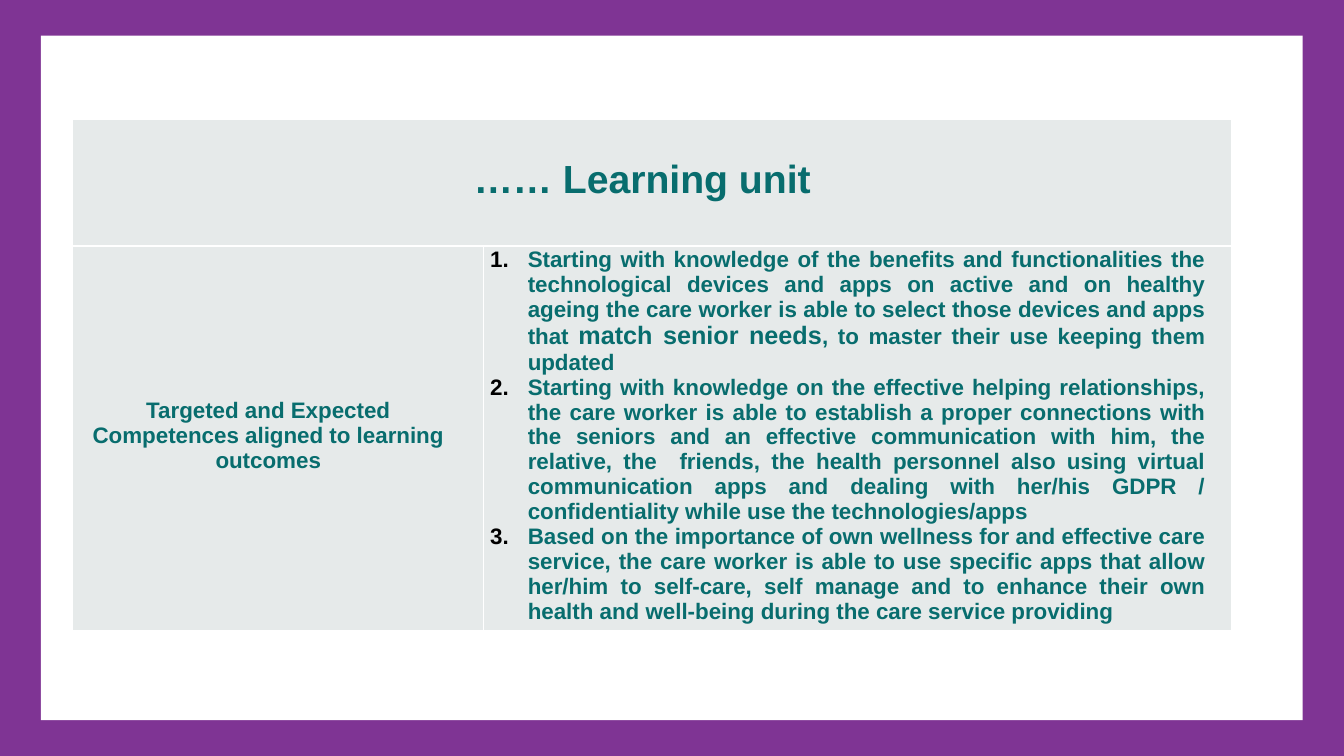
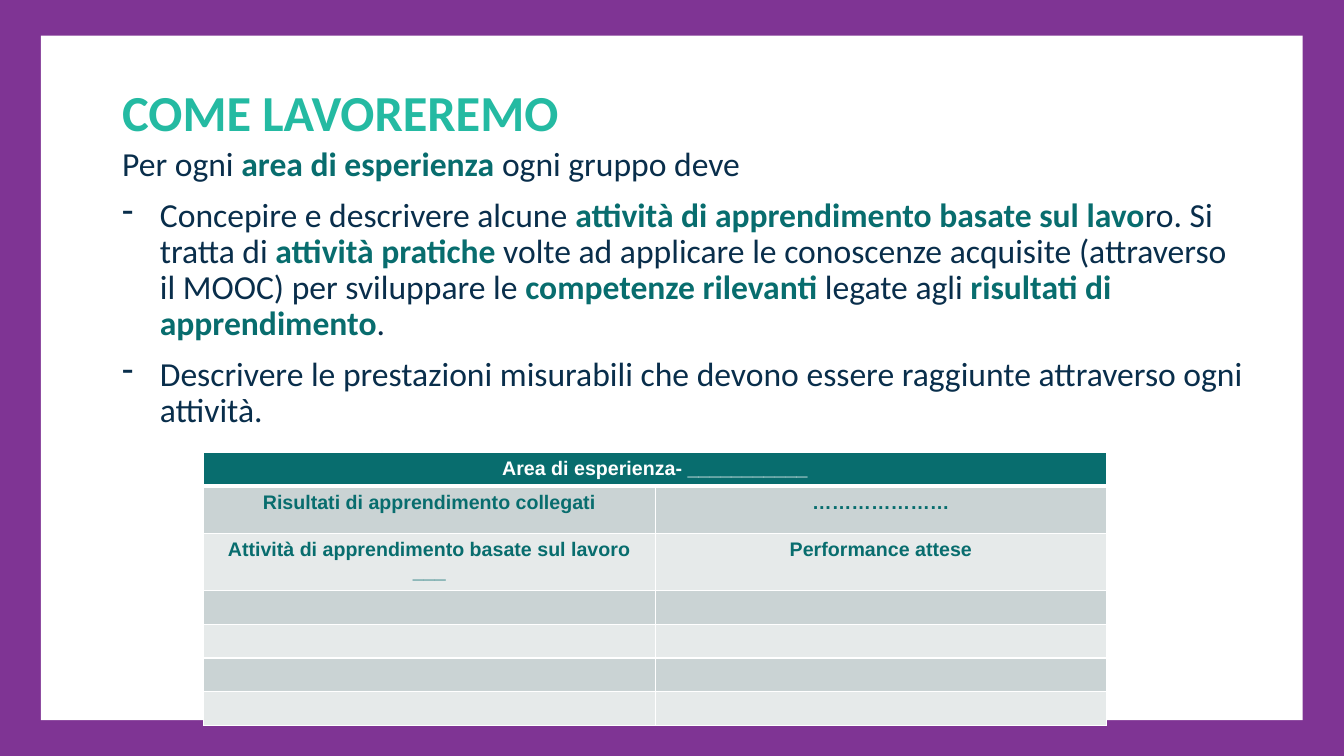
"""Build two framed slides: a learning unit table and a group work outline."""
from dataclasses import dataclass

from lxml import etree
from pptx import Presentation
from pptx.dml.color import RGBColor
from pptx.enum.shapes import MSO_SHAPE
from pptx.enum.text import MSO_ANCHOR, PP_ALIGN
from pptx.oxml.ns import qn
from pptx.slide import Slide
from pptx.util import Cm, Length, Pt

RECTANGLE = MSO_SHAPE.RECTANGLE
TOP, MIDDLE = MSO_ANCHOR.TOP, MSO_ANCHOR.MIDDLE
LEFT, CENTER, JUSTIFY = PP_ALIGN.LEFT, PP_ALIGN.CENTER, PP_ALIGN.JUSTIFY

PURPLE = RGBColor(0x7F, 0x34, 0x94)
WHITE = RGBColor(0xFF, 0xFF, 0xFF)
BLACK = RGBColor(0x00, 0x00, 0x00)
TEAL = RGBColor(0x08, 0x6D, 0x6E)
MINT = RGBColor(0x24, 0xBA, 0xA2)
NAVY = RGBColor(0x09, 0x2E, 0x4B)
LIGHT_GREY = RGBColor(0xE6, 0xEA, 0xEA)
MID_GREY = RGBColor(0xCA, 0xD3, 0xD4)

TABLE_FONT = "Arial"
TEXT_FONT = "Calibri"
SLIDE_WIDTH, SLIDE_HEIGHT = Cm(33.87), Cm(19.05)
TEXT_LEFT, TEXT_WIDTH = Cm(2.2), Cm(29.44)
THIN, THICK = Pt(1), Pt(3)


@dataclass(frozen=True)
class Run:
    """A stretch of text in one style."""
    text: str
    size: int
    color: RGBColor = TEAL
    bold: bool = True
    font: str = TABLE_FONT


@dataclass(frozen=True)
class Bullet:
    """A list marker: a character, or a number when none is given."""
    color: RGBColor
    character: str = ""


@dataclass(frozen=True)
class ParagraphStyle:
    """Layout of a paragraph."""
    alignment: PP_ALIGN = LEFT
    margin: Length = Cm(0)
    indent: Length = Cm(0)
    line_spacing: float = 1.0
    space_before: int = 0
    bullet: Bullet | None = None


@dataclass(frozen=True)
class TextBlock:
    """Paragraphs, each a tuple of runs, with one style per paragraph."""
    paragraphs: tuple[tuple[Run, ...], ...]
    styles: tuple[ParagraphStyle, ...]


@dataclass(frozen=True)
class Margins:
    """Inner margins of a table cell."""
    left: Length
    top: Length
    right: Length
    bottom: Length


@dataclass(frozen=True)
class TableRow:
    """A table row; a single block spans all columns."""
    height: Length
    fill: RGBColor
    blocks: tuple[TextBlock, ...] = ()


@dataclass(frozen=True)
class TableDesign:
    """Place and look of a table."""
    left: Length
    top: Length
    column_widths: tuple[Length, ...]
    rows: tuple[TableRow, ...]
    margins: Margins
    anchor: MSO_ANCHOR
    header_line: Length


CENTERED = ParagraphStyle(CENTER)
NUMBERED = ParagraphStyle(JUSTIFY, Cm(0.95), Cm(-0.95), bullet=Bullet(BLACK))
PLAIN = ParagraphStyle(LEFT, Cm(1.27), Cm(-0.64), 0.9, 10)
DASHED = ParagraphStyle(LEFT, Cm(1.58), Cm(-0.95), 0.9, 10, Bullet(NAVY, "-"))


def centered(*runs: Run) -> TextBlock:
    """Return a block with one centred paragraph."""
    return TextBlock((runs,), (CENTERED,))


def normal(text: str) -> Run:
    """Return body text."""
    return Run(text, 24, NAVY, False, TEXT_FONT)


def strong(text: str) -> Run:
    """Return highlighted body text."""
    return Run(text, 24, TEAL, True, TEXT_FONT)


COMPETENCES = TextBlock(
    (
        (
            Run("Starting with knowledge of the benefits and functionalities the technological "
                "devices and apps on active and on healthy ageing the care worker is able to "
                "select those devices and apps that ", 16),
            Run("match senior needs", 18),
            Run(", to master their use keeping them updated", 16),
        ),
        (
            Run("Starting with knowledge on the effective helping relationships, the care worker "
                "is able to establish a proper connections with the seniors and an effective "
                "communication with him, the relative, the  friends, the health personnel also "
                "using virtual communication apps and dealing with her/his GDPR / "
                "confidentiality while use the technologies/apps", 16),
        ),
        (
            Run("Based on the importance of own wellness for and effective care service, the care "
                "worker is able to use specific apps that allow her/him to self-care, self manage "
                "and to enhance their own health and well-being during the care service "
                "providing", 16),
        ),
    ),
    (NUMBERED,) * 3,
)

LEARNING_UNIT = TableDesign(
    Cm(1.83), Cm(3), (Cm(10.36), Cm(18.85)),
    (
        TableRow(Cm(3.2), LIGHT_GREY, (centered(Run("…… Learning unit", 28)),)),
        TableRow(Cm(9.68), LIGHT_GREY, (
            centered(Run("Targeted and Expected Competences aligned to learning outcomes", 16)),
            COMPETENCES,
        )),
    ),
    Margins(Cm(0.16), Cm(0.03), Cm(0.66), Cm(0.18)), MIDDLE, THIN,
)

EXPERIENCE_AREA = TableDesign(
    Cm(5.13), Cm(11.4), (Cm(11.38),) * 2,
    (
        TableRow(Cm(0.85), TEAL, (centered(Run("Area di esperienza- ___________", 14, WHITE)),)),
        TableRow(Cm(1.18), MID_GREY, (
            centered(Run("Risultati di apprendimento collegati", 14)),
            centered(Run("…………………", 14)),
        )),
        TableRow(Cm(1.38), LIGHT_GREY, (
            centered(Run("Attività di apprendimento basate sul lavoro ", 14), Run("___", 14)),
            centered(Run("Performance attese", 14)),
        )),
        *(TableRow(Cm(0.85), fill) for fill in (MID_GREY, LIGHT_GREY) * 2),
    ),
    Margins(Cm(0.25), Cm(0.13), Cm(0.25), Cm(0.13)), TOP, THICK,
)

HEADING = TextBlock(((Run("COME LAVOREREMO", 36, MINT, True, TEXT_FONT),),), (PLAIN,))

INSTRUCTIONS = TextBlock(
    (
        (normal("Per ogni "), strong("area di esperienza "), normal("ogni gruppo deve")),
        (
            normal("Concepire e descrivere alcune "),
            strong("attività di apprendimento basate sul lavo"),
            normal("ro. Si tratta di "),
            strong("attività pratiche "),
            normal("volte ad applicare le conoscenze acquisite (attraverso il MOOC) "
                   "per sviluppare le "),
            strong("competenze rilevanti "),
            normal("legate agli "),
            strong("risultati di apprendimento"),
            normal("."),
        ),
        (normal("Descrivere le prestazioni misurabili che devono essere raggiunte "
                "attraverso ogni attività."),),
    ),
    (PLAIN, DASHED, DASHED),
)


def style_paragraph(paragraph, style: ParagraphStyle) -> None:
    """Apply alignment, spacing, indents and list marker."""
    paragraph.alignment = style.alignment
    paragraph.line_spacing = style.line_spacing
    paragraph.space_before = Pt(style.space_before)
    properties = paragraph._p.get_or_add_pPr()
    properties.set("marL", str(int(style.margin)))
    properties.set("indent", str(int(style.indent)))
    if style.bullet is None:
        etree.SubElement(properties, qn("a:buNone"))
        return
    color = etree.SubElement(properties, qn("a:buClr"))
    etree.SubElement(color, qn("a:srgbClr"), val=str(style.bullet.color))
    if style.bullet.character:
        etree.SubElement(properties, qn("a:buChar"), char=style.bullet.character)
    else:
        etree.SubElement(properties, qn("a:buAutoNum"), type="arabicPeriod")


def write_text(text_frame, block: TextBlock) -> None:
    """Fill a text frame run by run."""
    for index, (runs, style) in enumerate(zip(block.paragraphs, block.styles)):
        paragraph = text_frame.add_paragraph() if index else text_frame.paragraphs[0]
        style_paragraph(paragraph, style)
        for item in runs:
            run = paragraph.add_run()
            run.text = item.text
            run.font.name = item.font
            run.font.size = Pt(item.size)
            run.font.bold = item.bold
            run.font.color.rgb = item.color


def add_text(slide: Slide, top: Length, height: Length, block: TextBlock) -> None:
    """Add a wrapped text box in the text column."""
    text_frame = slide.shapes.add_textbox(TEXT_LEFT, top, TEXT_WIDTH, height).text_frame
    text_frame.word_wrap = True
    write_text(text_frame, block)


def set_borders(cell, top: Length, bottom: Length) -> None:
    """Draw white lines around a cell."""
    properties = cell._tc.get_or_add_tcPr()
    for side, width in (("L", THIN), ("R", THIN), ("T", top), ("B", bottom)):
        line = etree.SubElement(properties, qn(f"a:ln{side}"), w=str(int(width)))
        fill = etree.SubElement(line, qn("a:solidFill"))
        etree.SubElement(fill, qn("a:srgbClr"), val=str(WHITE))


def add_table(slide: Slide, design: TableDesign) -> None:
    """Add a table with its fills, borders and text."""
    rows, widths, margins = design.rows, design.column_widths, design.margins
    height = sum(row.height for row in rows)
    table = slide.shapes.add_table(
        len(rows), len(widths), design.left, design.top, sum(widths), height).table
    table.first_row = table.horz_banding = False
    for column, width in zip(table.columns, widths):
        column.width = width
    for index, row in enumerate(rows):
        table.rows[index].height = row.height
        cells = [table.cell(index, column) for column in range(len(widths))]
        for cell in cells:
            set_borders(cell, design.header_line if index == 1 else THIN,
                        design.header_line if index == 0 else THIN)
            cell.fill.solid()
            cell.fill.fore_color.rgb = row.fill
            cell.vertical_anchor = design.anchor
            cell.margin_left, cell.margin_right = margins.left, margins.right
            cell.margin_top = margins.top if row.blocks else Cm(0)
            cell.margin_bottom = margins.bottom if row.blocks else Cm(0)
        if len(row.blocks) == 1:
            cells[0].merge(cells[-1])
        for cell, block in zip(cells, row.blocks):
            write_text(cell.text_frame, block)


def add_panel(slide: Slide, left: Length, top: Length, width: Length, height: Length,
              color: RGBColor) -> None:
    """Add a plain filled rectangle."""
    shape = slide.shapes.add_shape(RECTANGLE, left, top, width, height)
    shape.shadow.inherit = False
    shape.fill.solid()
    shape.fill.fore_color.rgb = color
    shape.line.fill.background()


def add_framed_slide(presentation) -> Slide:
    """Add a blank slide with the purple frame."""
    slide = presentation.slides.add_slide(presentation.slide_layouts[6])
    add_panel(slide, Cm(0), Cm(0), SLIDE_WIDTH, SLIDE_HEIGHT, PURPLE)
    add_panel(slide, Cm(1.03), Cm(0.9), Cm(31.8), Cm(17.25), WHITE)
    return slide


def main() -> None:
    """Build and save the presentation."""
    presentation = Presentation()
    presentation.slide_width, presentation.slide_height = SLIDE_WIDTH, SLIDE_HEIGHT
    add_table(add_framed_slide(presentation), LEARNING_UNIT)
    work_slide = add_framed_slide(presentation)
    add_text(work_slide, Cm(3.6), Cm(10.7), INSTRUCTIONS)
    add_text(work_slide, Cm(2.1), Cm(2.23), HEADING)
    add_table(work_slide, EXPERIENCE_AREA)
    presentation.save("out.pptx")


if __name__ == "__main__":
    main()
